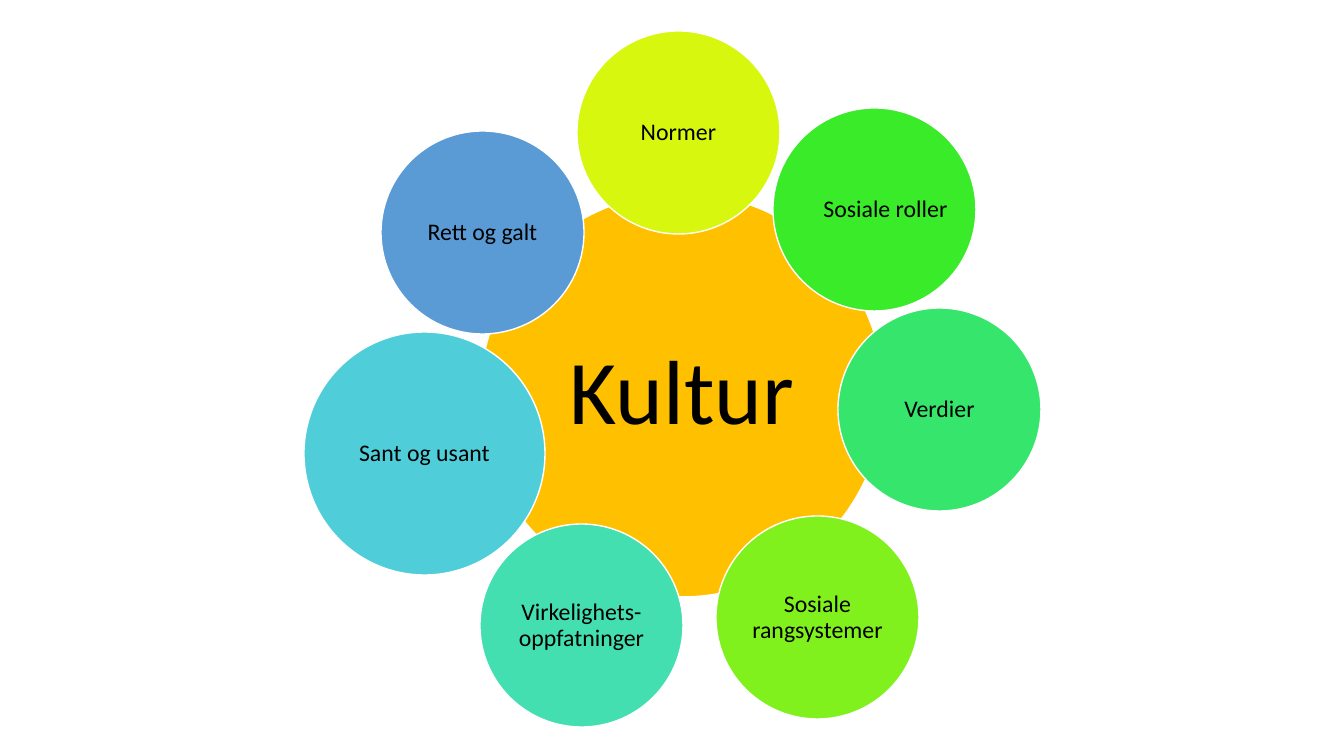
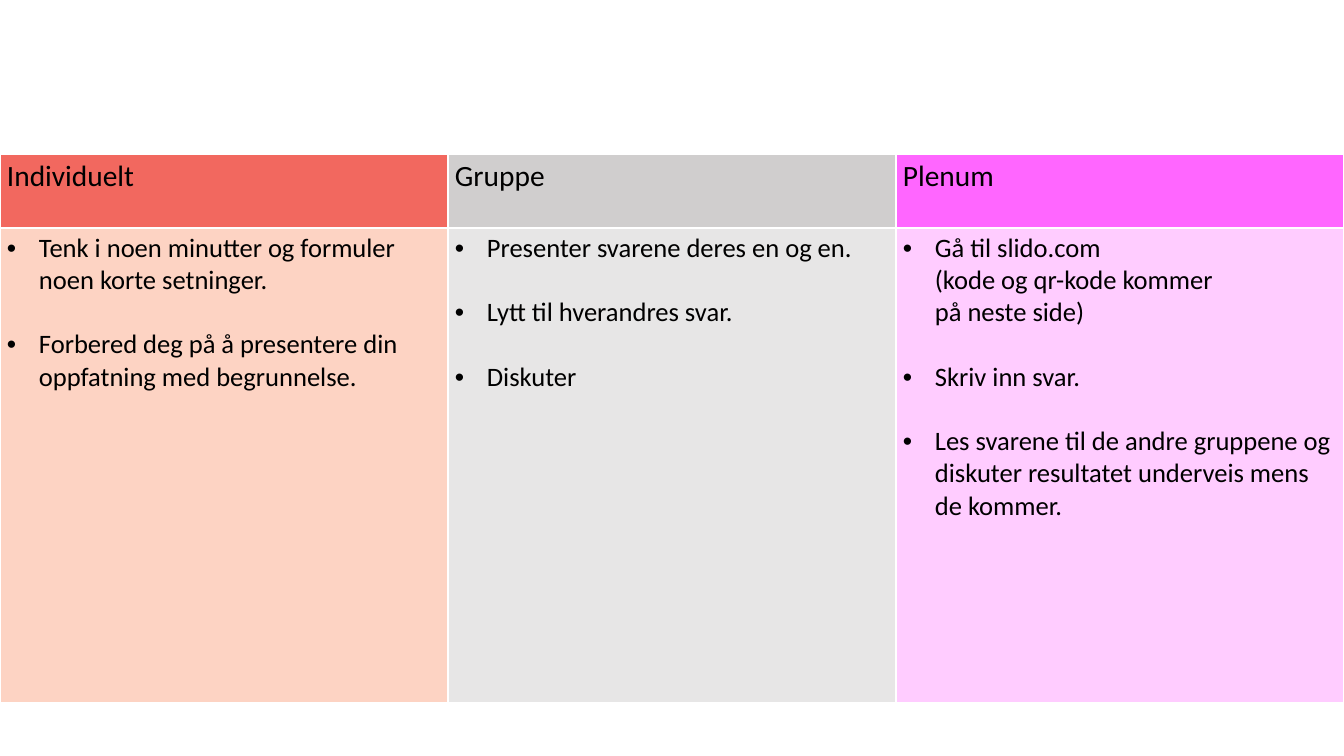
from lxml import etree
from pptx import Presentation
from pptx import util as u
from pptx.dml.color import RGBColor
from pptx.enum import shapes, text
from pptx.oxml import ns

SLIDE_W, SLIDE_H = 1344, 756
EMU_PER_PX = 12192000 / SLIDE_W
FONT = "Calibri"
BLACK = RGBColor(0x00, 0x00, 0x00)
WHITE = RGBColor(0xFF, 0xFF, 0xFF)
AMBER = RGBColor(0xFF, 0xC0, 0x00)
YELLOW = RGBColor(0xD7, 0xF8, 0x0E)
LIME = RGBColor(0x80, 0xF1, 0x1C)
GREEN = RGBColor(0x39, 0xEB, 0x29)
EMERALD = RGBColor(0x36, 0xE5, 0x6C)
TEAL = RGBColor(0x43, 0xDF, 0xB0)
CYAN = RGBColor(0x4F, 0xCE, 0xDA)
BLUE = RGBColor(0x5B, 0x9B, 0xD5)
RED = RGBColor(0xF2, 0x68, 0x5F)
PEACH = RGBColor(0xFD, 0xD3, 0xC3)
GREY = RGBColor(0xD0, 0xCE, 0xCE)
PALE_GREY = RGBColor(0xE7, 0xE6, 0xE6)
MAGENTA = RGBColor(0xFF, 0x66, 0xFF)
PINK = RGBColor(0xFF, 0xCC, 0xFF)

# Culture wheel: label, left, top, width, height, colour, text shift to the right
HUB = ("Kultur", 480, 193, 404, 404, AMBER, 0)
PETAL = 203
PETALS = [
    ("Normer", 577, 31, PETAL, PETAL, YELLOW, 0),
    ("Sosiale rangsystemer", 716, 516, PETAL, PETAL, LIME, 0),
    ("Sosiale roller", 773, 108, PETAL, PETAL, GREEN, 11),
    ("Verdier", 838, 308, PETAL, PETAL, EMERALD, 0),
    ("Virkelighets-oppfatninger", 480, 524, PETAL, PETAL, TEAL, 0),
    ("Sant og usant", 304, 332, 241, 243, CYAN, 0),
    ("Rett og galt", 381, 131, PETAL, PETAL, BLUE, 0),
]

# Work phases: heading, heading colour, body colour, steps (\v is a line break)
PHASES = [
    ("Individuelt", RED, PEACH, [
        "Tenk i noen minutter og formuler noen korte setninger.",
        "Forbered deg på å presentere din oppfatning med begrunnelse."]),
    ("Gruppe", GREY, PALE_GREY, [
        "Presenter svarene deres en og en.",
        "Lytt til hverandres svar.",
        "Diskuter"]),
    ("Plenum", MAGENTA, PINK, [
        "Gå til slido.com\v(kode og qr-kode kommer\vpå neste side)",
        "Skriv inn svar.",
        "Les svarene til de andre gruppene og diskuter resultatet underveis "
        "mens de kommer."]),
]
TABLE_TOP = 154
ROW_HEIGHTS = (74, 475)
BULLET_INDENT = 32
STEP_GAP = u.Pt(23)


def px(length):
    return u.Emu(round(length * EMU_PER_PX))


def style_runs(paragraph, size):
    for run in paragraph.runs:
        run.font.name = FONT
        run.font.size = u.Pt(size)
        run.font.color.rgb = BLACK


def add_circle(slide, circle, size, margin):
    label, left, top, width, height, colour, shift = circle
    disc = slide.shapes.add_shape(shapes.MSO_SHAPE.OVAL, px(left), px(top),
                                  px(width), px(height))
    disc.shadow.inherit = False
    disc.fill.solid()
    disc.fill.fore_color.rgb = colour
    disc.line.color.rgb = WHITE
    disc.line.width = u.Pt(1)
    frame = disc.text_frame
    frame.text = label
    frame.word_wrap = not shift
    frame.vertical_anchor = text.MSO_ANCHOR.MIDDLE
    frame.margin_left = px(margin + 2 * shift)
    frame.margin_right = frame.margin_top = frame.margin_bottom = px(margin)
    paragraph = frame.paragraphs[0]
    paragraph.alignment = text.PP_ALIGN.CENTER
    paragraph.line_spacing = 0.9
    style_runs(paragraph, size)


def add_borders(cell):
    properties = cell._tc.get_or_add_tcPr()
    for side in ("a:lnL", "a:lnR", "a:lnT", "a:lnB"):
        border = etree.SubElement(properties, ns.qn(side), w=str(u.Pt(1)))
        fill = etree.SubElement(border, ns.qn("a:solidFill"))
        etree.SubElement(fill, ns.qn("a:srgbClr"), val=str(WHITE))


def add_bullet(paragraph):
    properties = paragraph._p.get_or_add_pPr()
    properties.set("marL", str(px(BULLET_INDENT)))
    properties.set("indent", str(-px(BULLET_INDENT)))
    etree.SubElement(properties, ns.qn("a:buFont"), typeface="Arial")
    etree.SubElement(properties, ns.qn("a:buChar"), char="•")


def fill_cell(cell, lines, colour, size, bulleted):
    add_borders(cell)
    cell.fill.solid()
    cell.fill.fore_color.rgb = colour
    cell.margin_left = cell.margin_right = px(7)
    cell.margin_top = cell.margin_bottom = px(4)
    frame = cell.text_frame
    for index, line in enumerate(lines):
        paragraph = frame.add_paragraph() if index else frame.paragraphs[0]
        paragraph.text = line
        if bulleted:
            add_bullet(paragraph)
        if index:
            paragraph.space_before = STEP_GAP
        style_runs(paragraph, size)


def build_wheel(slide):
    add_circle(slide, HUB, 65, 9)
    for petal in PETALS:
        add_circle(slide, petal, 17, 2)


def build_phases(slide):
    table = slide.shapes.add_table(len(ROW_HEIGHTS), len(PHASES), 0, px(TABLE_TOP),
                                   px(SLIDE_W), px(sum(ROW_HEIGHTS))).table
    table.first_row = table.horz_banding = False
    for row, height in zip(table.rows, ROW_HEIGHTS):
        row.height = px(height)
    for column, (heading, dark, light, steps) in enumerate(PHASES):
        table.columns[column].width = px(SLIDE_W / len(PHASES))
        fill_cell(table.cell(0, column), [heading], dark, 21, False)
        fill_cell(table.cell(1, column), steps, light, 19, True)


def main():
    deck = Presentation()
    deck.slide_width, deck.slide_height = px(SLIDE_W), px(SLIDE_H)
    blank = deck.slide_layouts[6]
    for build in (build_wheel, build_phases):
        build(deck.slides.add_slide(blank))
    deck.save("out.pptx")


if __name__ == "__main__":
    main()
